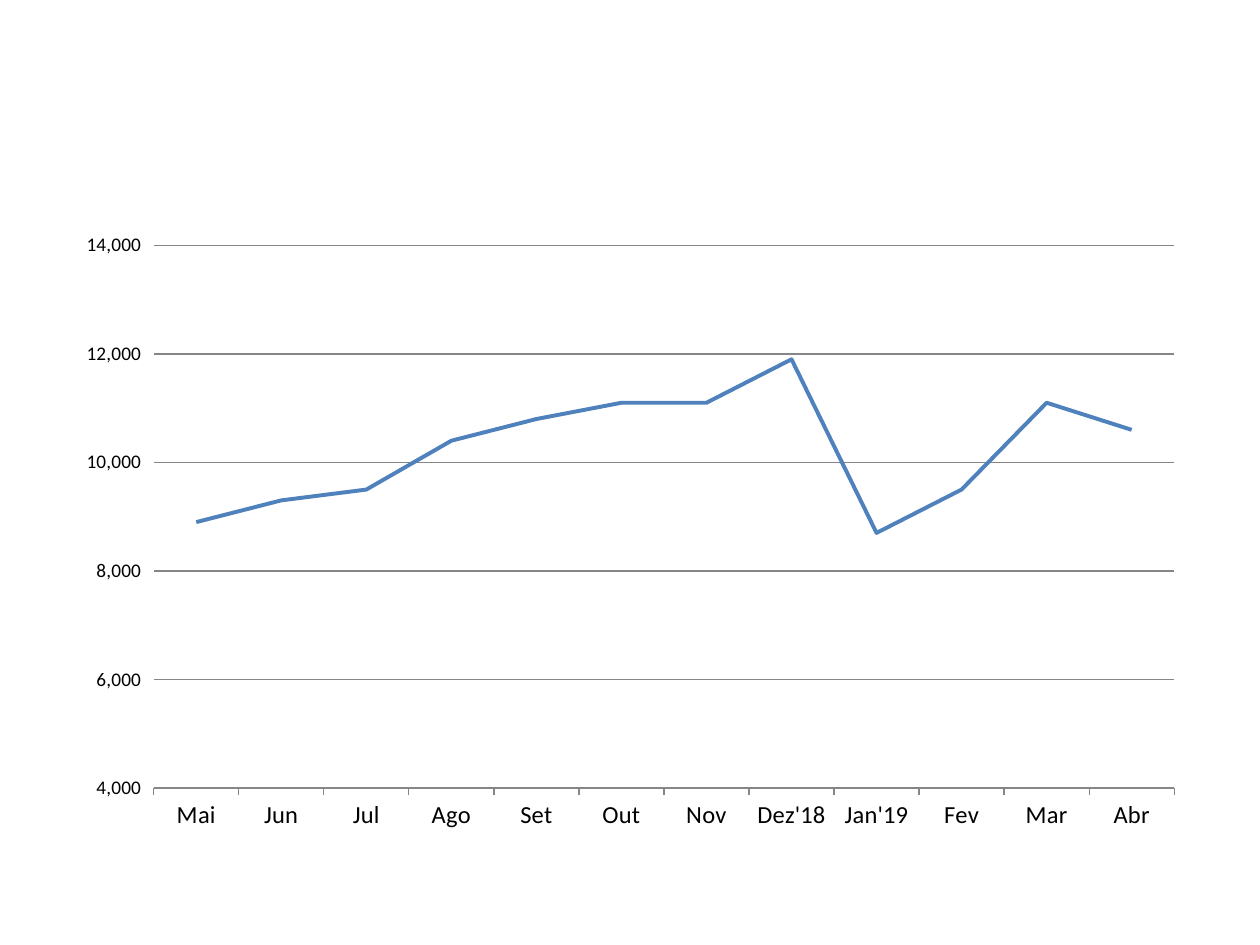
from lxml.etree import SubElement as Sub
from pptx import Presentation
from pptx.chart.data import CategoryChartData as Data
from pptx.dml.color import RGBColor as RGB
from pptx.enum.chart import XL_CHART_TYPE as Kind, XL_TICK_MARK as Tick
from pptx.oxml.ns import qn
from pptx.util import Inches, Pt

BLUE = RGB(0x4F, 0x81, 0xBD)
GRAY = RGB(0x86, 0x86, 0x86)
BLACK = RGB(0, 0, 0)
FONT = "Calibri"

MONTHS = ["Mai", "Jun", "Jul", "Ago", "Set", "Out",
          "Nov", "Dez'18", "Jan'19", "Fev", "Mar", "Abr"]
VALUES = [8900, 9300, 9500, 10400, 10800, 11100,
          11100, 11900, 8700, 9500, 11100, 10600]


def set_font(font, size):
    """Give text its typeface, size and colour."""
    font.name = FONT
    font.size = Pt(size)
    font.color.rgb = BLACK


def set_line(line, color, width):
    """Give a line its colour and width."""
    line.color.rgb = color
    line.width = Pt(width)


def set_plot(chart, x, y, w, h):
    """Place the inner plot area by fractions of the chart."""
    area = chart.plots[0]._element.getparent()
    layout = area.find(qn("c:layout"))
    if layout is None:
        layout = Sub(area, qn("c:layout"))
        area.insert(0, layout)
    manual = Sub(layout, qn("c:manualLayout"))
    parts = {"layoutTarget": "inner", "xMode": "edge", "yMode": "edge",
             "x": x, "y": y, "w": w, "h": h}
    for name, val in parts.items():
        Sub(manual, qn(f"c:{name}")).set("val", str(val))


def style_axes(chart):
    """Format the month axis and the value axis."""
    months = chart.category_axis
    months.major_tick_mark = Tick.OUTSIDE
    set_line(months.format.line, GRAY, 0.75)
    set_font(months.tick_labels.font, 14)

    scale = chart.value_axis
    scale.minimum_scale, scale.maximum_scale = 4000, 14000
    scale.major_unit = 2000
    scale.major_tick_mark = Tick.OUTSIDE
    scale.format.line.fill.background()
    set_line(scale.major_gridlines.format.line, GRAY, 0.75)
    set_font(scale.tick_labels.font, 11)
    scale.tick_labels.number_format = "#,##0"
    scale.tick_labels.number_format_is_linked = False


def add_trend(slide):
    """Add the monthly line chart."""
    data = Data()
    data.categories = MONTHS
    data.add_series("Series 1", VALUES)
    chart = slide.shapes.add_chart(
        Kind.LINE, Inches(0.5), Inches(1.75), Inches(9), Inches(4.95), data
    ).chart
    chart.has_legend = False
    chart.has_title = False
    set_font(chart.font, 10)
    chart.plots[0].vary_by_categories = False
    series = chart.series[0]
    series.smooth = False
    set_line(series.format.line, BLUE, 2.25)
    style_axes(chart)
    set_plot(chart, 0.08, 0.04, 0.9, 0.87)


def main():
    """Build and save the slide."""
    deck = Presentation()
    deck.slide_width, deck.slide_height = Inches(10), Inches(7.5)
    slide = deck.slides.add_slide(deck.slide_layouts[6])
    add_trend(slide)
    deck.save("out.pptx")


if __name__ == "__main__":
    main()
